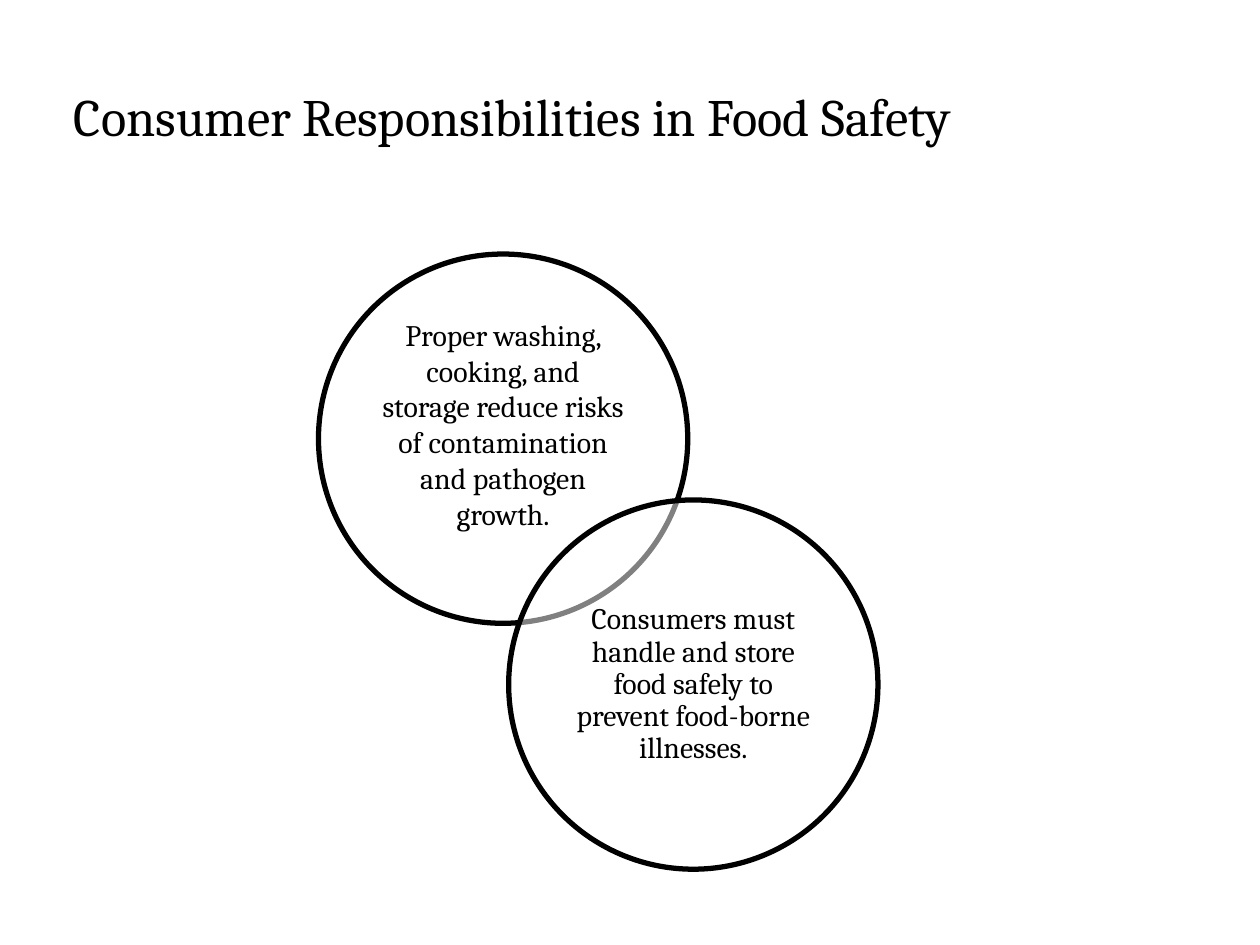
from dataclasses import dataclass

from lxml.etree import SubElement
from pptx import Presentation
from pptx.dml.color import RGBColor
from pptx.enum.shapes import MSO_SHAPE
from pptx.enum.text import MSO_ANCHOR, PP_ALIGN
from pptx.oxml.ns import qn
from pptx.util import Pt


@dataclass(frozen=True)
class Theme:
    font: str = "Cambria"
    ink: RGBColor = RGBColor(0, 0, 0)
    paper: RGBColor = RGBColor(255, 255, 255)
    title_size: float = 30
    body_size: float = 17
    outline: float = 3


class SlideBuilder:
    def __init__(self, slide, theme):
        self.slide = slide
        self.theme = theme

    def set_text(self, tf, text, size, line_spacing=None):
        tf.word_wrap = True
        tf.vertical_anchor = MSO_ANCHOR.MIDDLE
        p = tf.paragraphs[0]
        p.alignment = PP_ALIGN.CENTER
        if line_spacing:
            p.line_spacing = line_spacing
        r = p.add_run()
        r.text = text
        r.font.name = self.theme.font
        r.font.size = Pt(size)
        r.font.color.rgb = self.theme.ink

    def title(self, text, left, top, width, height):
        sp = self.slide.shapes.title
        sp.left, sp.top, sp.width, sp.height = map(Pt, (left, top, width, height))
        self.set_text(sp.text_frame, text, self.theme.title_size)

    def circle(self, left, top, diameter, opacity=50):
        sp = self.slide.shapes.add_shape(
            MSO_SHAPE.OVAL, Pt(left), Pt(top), Pt(diameter), Pt(diameter))
        sp.shadow.inherit = False
        sp.fill.solid()
        sp.fill.fore_color.rgb = self.theme.paper
        color = sp.element.spPr.find(qn("a:solidFill"))[0]
        SubElement(color, qn("a:alpha"), val=str(opacity * 1000))
        sp.line.color.rgb = self.theme.ink
        sp.line.width = Pt(self.theme.outline)

    def text_box(self, text, left, top, side, insets, line_spacing=None):
        """Add a square text box; insets are top and bottom."""
        sp = self.slide.shapes.add_textbox(Pt(left), Pt(top), Pt(side), Pt(side))
        tf = sp.text_frame
        tf.margin_left = tf.margin_right = Pt(5)
        tf.margin_top, tf.margin_bottom = map(Pt, insets)
        self.set_text(tf, text, self.theme.body_size, line_spacing)

    def labelled_circle(self, text, left, top, diameter, **text_format):
        """Draw a circle with its text in the inscribed square."""
        self.circle(left, top, diameter)
        side = diameter / 2 ** 0.5
        margin = (diameter - side) / 2
        self.text_box(text, left + margin, top + margin, side, **text_format)


def main():
    prs = Presentation()
    prs.slide_width, prs.slide_height = Pt(720), Pt(540)
    title_only = prs.slide_layouts[5]
    builder = SlideBuilder(prs.slides.add_slide(title_only), Theme())

    builder.title("Consumer Responsibilities in Food Safety", -31, 21, 648, 90)
    diameter = 211
    builder.labelled_circle(
        "Proper washing, cooking, and storage reduce risks of contamination "
        "and pathogen growth.",
        182, 145.2, diameter, insets=(0, 17))
    builder.labelled_circle(
        "Consumers must handle and store food safely to prevent food-borne "
        "illnesses.",
        290.7, 285.7, diameter, insets=(5, 5), line_spacing=0.9)

    prs.save("out.pptx")


if __name__ == "__main__":
    main()
